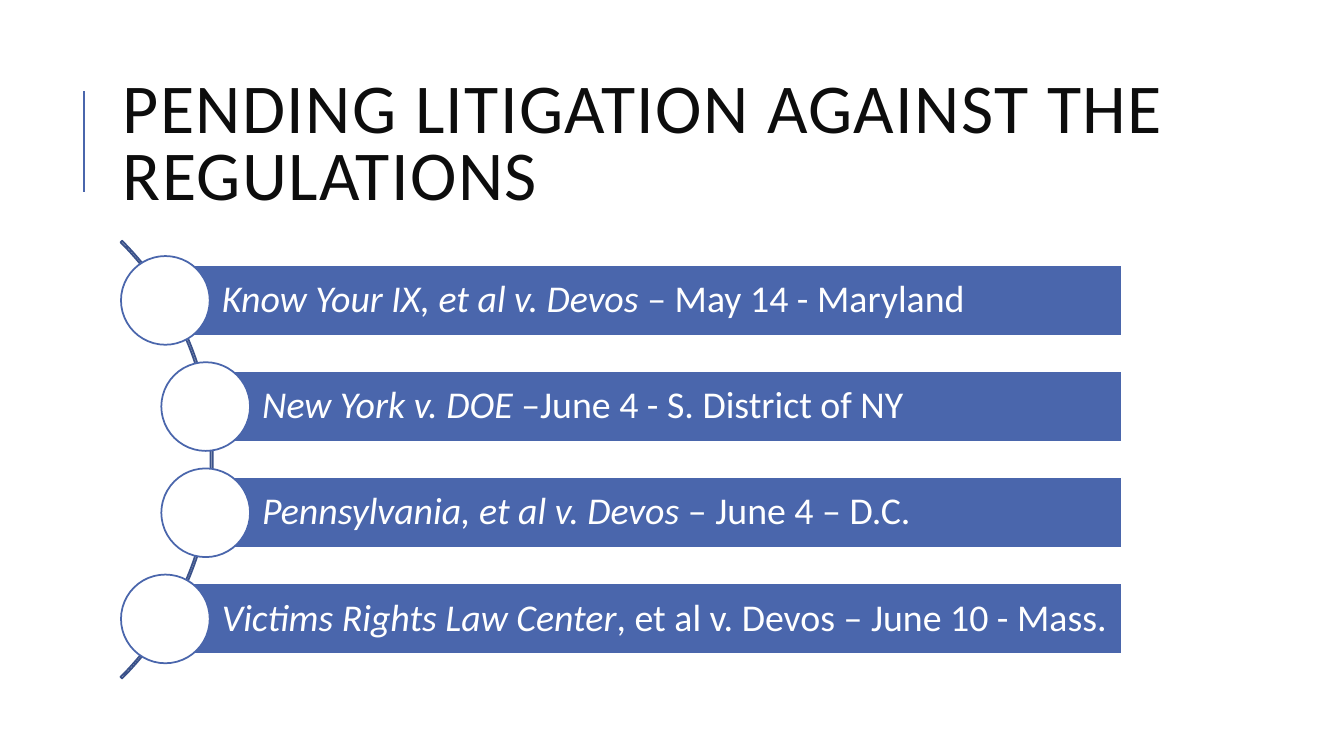
from pptx import Presentation
from pptx.dml.color import RGBColor
from pptx.enum.shapes import MSO_CONNECTOR as Connector, MSO_SHAPE as Shape
from pptx.enum.text import MSO_ANCHOR as Anchor, PP_ALIGN as Align
from pptx.oxml.ns import qn
from pptx.util import Inches, Pt
from lxml.etree import SubElement

FONT = "Calibri"
BLUE, DARK_BLUE, WHITE, INK = "4A66AC", "3B528A", "FFFFFF", "0D0D0D"

CASES = [
    ("Know Your IX, et al v. Devos ", "– May 14 - Maryland"),
    ("New York v. DOE ", "–June 4 - S. District of NY"),
    ("Pennsylvania, et al v. Devos ", "– June 4 – D.C."),
    ("Victims Rights Law Center", ", et al v. Devos – June 10 - Mass."),
]
DISC_SIZE = 0.88
DISC_LEFTS = [1.2, 1.6, 1.6, 1.2]
FIRST_TOP, LAST_TOP = 2.54, 5.7
BAR_RIGHT, BAR_HEIGHT = 11.13, 0.7


def color(value):
    return RGBColor.from_string(value)


class LitigationSlide:
    def __init__(self, presentation):
        self.slide = presentation.slides.add_slide(presentation.slide_layouts[6])
        self.shapes = self.slide.shapes

    def style_text(self, paragraph, size, ink, line_spacing):
        paragraph.alignment = Align.LEFT
        paragraph.line_spacing = line_spacing
        paragraph.font.name = FONT
        paragraph.font.size = Pt(size)
        paragraph.font.color.rgb = color(ink)

    def rule(self, x, top, bottom):
        line = self.shapes.add_connector(
            Connector.STRAIGHT, Inches(x), Inches(bottom), Inches(x), Inches(top))
        line.line.color.rgb = color(BLUE)
        line.line.width = Pt(1.5)
        SubElement(line._element.spPr, qn("a:effectLst"))

    def title(self, text, left, top, width, height):
        box = self.shapes.add_textbox(
            Inches(left), Inches(top), Inches(width), Inches(height))
        frame = box.text_frame
        frame.word_wrap = True
        frame.vertical_anchor = Anchor.MIDDLE
        paragraph = frame.paragraphs[0]
        run = paragraph.add_run()
        run.text = text
        run._r.get_or_add_rPr().set("spc", "100")
        self.style_text(paragraph, 50, INK, 0.8)

    def outline(self, kind, left, top, width, height, fill, line):
        shape = self.shapes.add_shape(
            kind, Inches(left), Inches(top), Inches(width), Inches(height))
        shape.shadow.inherit = False
        if fill:
            shape.fill.solid()
            shape.fill.fore_color.rgb = color(fill)
        else:
            shape.fill.background()
        shape.line.color.rgb = color(line)
        shape.line.width = Pt(1.25)
        return shape

    def arc(self, left, top, size):
        shape = self.outline(Shape.BLOCK_ARC, left, top, size, size, None, DARK_BLUE)
        for index, value in enumerate((189, 27, 0.0035)):
            shape.adjustments[index] = value

    def case(self, name, detail, disc_left, disc_top):
        bar_left = disc_left + DISC_SIZE / 2
        bar_top = disc_top + (DISC_SIZE - BAR_HEIGHT) / 2
        bar = self.outline(Shape.RECTANGLE, bar_left, bar_top,
                           BAR_RIGHT - bar_left, BAR_HEIGHT, BLUE, WHITE)
        frame = bar.text_frame
        frame.word_wrap = True
        frame.vertical_anchor = Anchor.MIDDLE
        frame.margin_left = Inches(0.56)
        frame.margin_top = frame.margin_right = frame.margin_bottom = Inches(0.07)
        paragraph = frame.paragraphs[0]
        for text, italic in ((name, True), (detail, False)):
            run = paragraph.add_run()
            run.text = text
            run.font.italic = italic
        self.style_text(paragraph, 27, WHITE, 0.9)
        self.outline(Shape.OVAL, disc_left, disc_top, DISC_SIZE, DISC_SIZE, WHITE, BLUE)


def main():
    presentation = Presentation()
    presentation.slide_width = Inches(13.33)
    presentation.slide_height = Inches(7.5)
    page = LitigationSlide(presentation)
    page.rule(0.83, 0.9, 1.9)
    page.title("PENDING LITIGATION AGAINST THE REGULATIONS", 1.12, 0.64, 10.63, 1.64)
    page.arc(-4.03, 1.49, 6.14)
    pitch = (LAST_TOP - FIRST_TOP) / (len(CASES) - 1)
    for index, ((name, detail), disc_left) in enumerate(zip(CASES, DISC_LEFTS)):
        page.case(name, detail, disc_left, FIRST_TOP + index * pitch)
    presentation.save("out.pptx")


if __name__ == "__main__":
    main()
